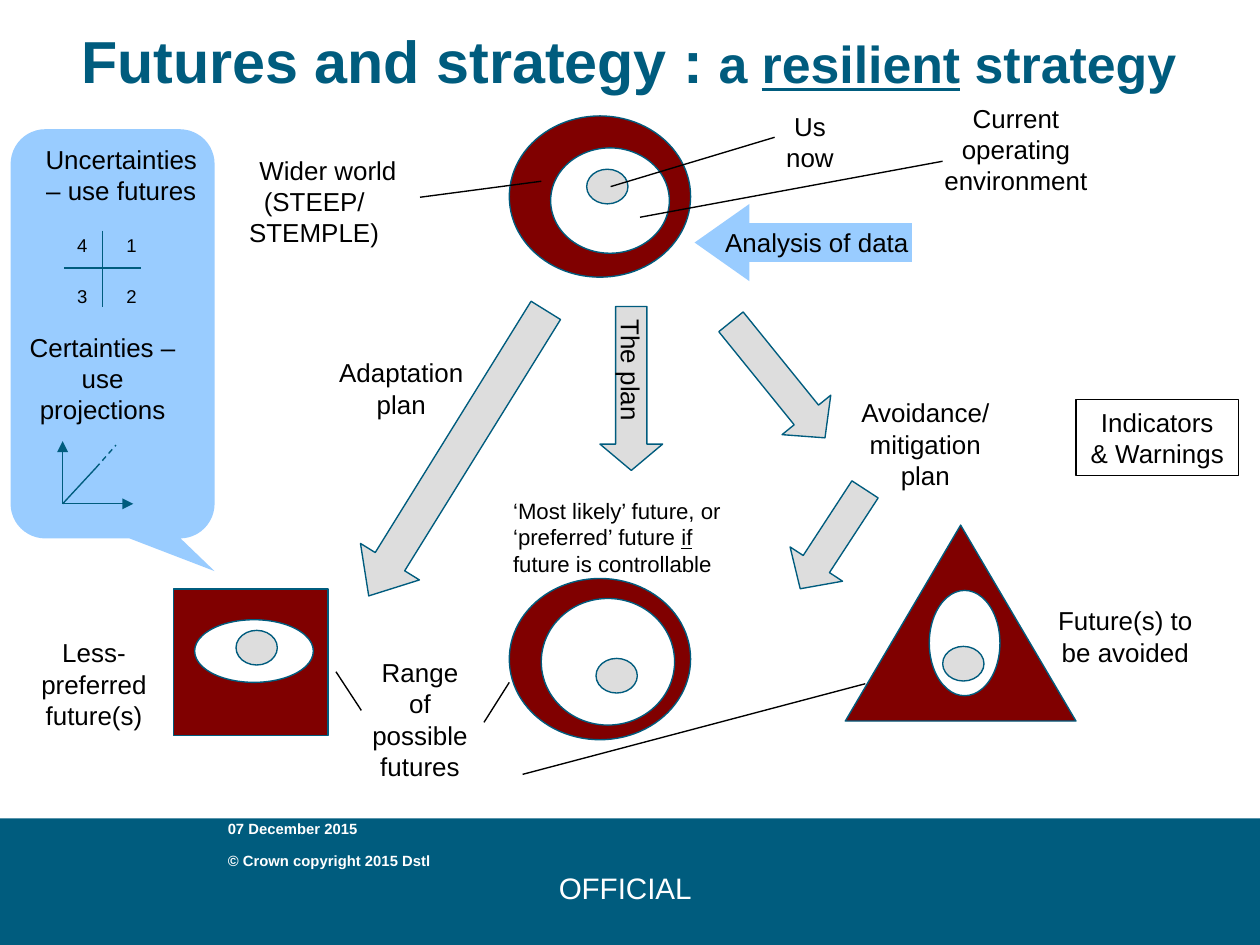
from pptx import Presentation
from pptx.dml.color import RGBColor
from pptx.enum.dml import MSO_LINE as Dash
from pptx.enum.shapes import MSO_CONNECTOR as Link, MSO_SHAPE as Form
from pptx.enum.text import MSO_ANCHOR as Anchor, PP_ALIGN as Align
from pptx.oxml.ns import qn
from pptx.util import Emu, Pt
from lxml.etree import SubElement

PX = 9144  # 100 px to the inch
TEAL = RGBColor(0x00, 0x5C, 0x7E)
MAROON = RGBColor(0x80, 0x00, 0x00)
GREY = RGBColor(0xDD, 0xDD, 0xDD)
BLUE = RGBColor(0x99, 0xCC, 0xFF)
BLACK = RGBColor(0x00, 0x00, 0x00)
WHITE = RGBColor(0xFF, 0xFF, 0xFF)


def px(*sizes):
    return [Emu(n * PX) for n in sizes]


def write(frame, text, size=14, color=BLACK, bold=False, align=Align.CENTER,
          anchor=Anchor.TOP, wrap=True, space=None):
    """Fill a frame; text is a string or a list of paragraphs.

    A paragraph is a string or a list of (words, size, underline) runs.
    """
    frame.word_wrap = wrap
    frame.vertical_anchor = anchor
    for i, part in enumerate([text] if isinstance(text, str) else text):
        para = frame.add_paragraph() if i else frame.paragraphs[0]
        para.alignment = align
        para.line_spacing = space
        runs = [(part, size, False)] if isinstance(part, str) else part
        for words, points, under in runs:
            run = para.add_run()
            run.text = words
            font = run.font
            font.name, font.size, font.bold = "Arial", Pt(points), bold
            font.underline = under
            font.color.rgb = color


class Board:
    def __init__(self, slide):
        self.shapes = slide.shapes
        self.width = Pt(0.75)

    def text(self, box, text, **style):
        frame = self.shapes.add_textbox(*px(*box)).text_frame
        write(frame, text, **style)
        return frame

    def shape(self, form, box, fill=None, line=TEAL, turn=0, adjust=()):
        shape = self.shapes.add_shape(form, *px(*box))
        shape.shadow.inherit = False
        shape.rotation = turn
        for i, value in enumerate(adjust):
            shape.adjustments[i] = value
        if fill is None:
            shape.fill.background()
        else:
            shape.fill.solid()
            shape.fill.fore_color.rgb = fill
        if line is None:
            shape.line.fill.background()
        else:
            shape.line.color.rgb = line
            shape.line.width = self.width
        return shape

    def line(self, ends, color=BLACK, dash=None, arrow=False):
        link = self.shapes.add_connector(Link.STRAIGHT, *px(*ends))
        link.line.color.rgb = color
        link.line.width = self.width
        if dash:
            link.line.dash_style = dash
        if arrow:
            SubElement(link.line._get_or_add_ln(), qn("a:tailEnd"), type="triangle")
        SubElement(link._element.spPr, qn("a:effectLst"))


def draw_footer(board):
    board.shape(Form.RECTANGLE, (0, 614, 945, 95), TEAL, None)
    board.text((339, 616, 260, 94), "OFFICIAL", size=16, color=WHITE,
               anchor=Anchor.MIDDLE, space=Pt(24))
    small = dict(size=8, color=WHITE, bold=True, align=Align.LEFT)
    board.text((161, 634, 181, 31), "© Crown copyright 2015 Dstl", **small)
    board.text((161, 602, 181, 31), "07 December 2015", anchor=Anchor.BOTTOM, **small)


def draw_worlds(board):
    """Each world is an outer form, a white field and a grey core."""
    worlds = [
        (Form.OVAL, (382, 87, 136, 121), (413, 111, 89, 79), (440, 127)),
        (Form.OVAL, (382, 434, 136, 121), (406, 449, 100, 95), (447, 494)),
        (Form.ISOSCELES_TRIANGLE, (634, 394, 173, 147), (697, 443, 53, 79), (707, 485)),
        (Form.RECTANGLE, (130, 442, 116, 110), (146, 465, 89, 47), (177, 473)),
    ]
    for form, outer, field, core in worlds:
        board.shape(form, outer, MAROON)
        board.shape(Form.OVAL, field, WHITE)
        board.shape(Form.OVAL, (*core, 31, 26), GREY)


def draw_arrows(board):
    data = board.shape(Form.LEFT_ARROW, (521, 153, 163, 58), BLUE, None,
                       adjust=(0.5, 0.71))
    write(data.text_frame, "Analysis of data", anchor=Anchor.MIDDLE, wrap=False)
    plan = board.shape(Form.DOWN_ARROW, (450, 230, 47, 123), GREY, adjust=(0.5, 0.42))
    write(plan.text_frame, "The plan", anchor=Anchor.MIDDLE, wrap=False)
    plan.text_frame._txBody.bodyPr.set("vert", "eaVert")
    for box, turn, head in [((560, 229, 47, 112), 321, 0.47),
                            ((601, 360, 47, 89), 33.1, 0.47),
                            ((317, 214, 52, 252), 31.8, 0.58)]:
        board.shape(Form.DOWN_ARROW, box, GREY, turn=turn, adjust=(0.5, head))


def draw_callout(board):
    board.shape(Form.ROUNDED_RECTANGULAR_CALLOUT, (8, 97, 153, 307), BLUE, None,
                adjust=(0.5, 0.58, 0.17))
    board.text((20, 103, 142, 57), "Uncertainties – use futures")
    board.text((10, 244, 134, 81), "Certainties – use projections")
    for ends in [(77, 173, 77, 230), (48, 201, 106, 201)]:
        board.line(ends, TEAL)
    for digit, x, y in [("1", 85, 171), ("2", 85, 209), ("3", 48, 209), ("4", 48, 171)]:
        board.text((x, y, 28, 27), digit, size=10, align=Align.LEFT, wrap=False)
    for end in [(47, 331), (100, 378)]:
        board.line((47, 378, *end), TEAL, arrow=True)
    board.line((47, 378, 72, 351), TEAL)
    board.line((72, 351, 87, 334), TEAL, dash=Dash.DASH)


def draw_labels(board):
    wide = board.text((177, 111, 138, 81), ["Wider world", "(STEEP/", "STEMPLE)"])
    for para in wide.paragraphs[1:]:
        para.alignment = Align.LEFT
    wide.paragraphs[1]._p.get_or_add_pPr().set("marL", str(11 * PX))
    labels = [
        ((697, 72, 130, 81), "Current operating environment"),
        ((579, 78, 57, 57), "Us now"),
        ((267, 488, 96, 104), "Range of possible futures"),
        ((783, 449, 122, 57), "Future(s) to be avoided"),
        ((633, 293, 122, 81), "Avoidance/ mitigation plan"),
        ((244, 263, 114, 57), "Adaptation plan"),
        ((15, 473, 111, 81), "Less- preferred future(s)"),
    ]
    for box, words in labels:
        board.text(box, words)
    board.text((375, 368, 193, 71), [
        "‘Most likely’ future, or",
        [("‘preferred’ future ", 12, False), ("if", 12, True)],
        "future is controllable"], size=12, align=Align.LEFT)
    signs = board.shape(Form.RECTANGLE, (807, 300, 122, 57), line=BLACK)
    write(signs.text_frame, "Indicators & Warnings")
    for ends in [(315, 148, 406, 136), (480, 163, 707, 121), (458, 140, 581, 103),
                 (363, 542, 382, 512), (392, 581, 649, 513), (252, 504, 271, 533)]:
        board.line(ends)


def main():
    deck = Presentation()
    deck.slide_width, deck.slide_height = px(945, 709)
    board = Board(deck.slides.add_slide(deck.slide_layouts[6]))
    draw_footer(board)
    board.text((51, 3, 850, 74), [[("Futures and strategy :", 32, False),
                                   (" a ", 28, False), ("resilient", 28, True),
                                   (" strategy", 28, False)]],
               color=TEAL, bold=True, align=Align.LEFT, space=1.2)
    draw_worlds(board)
    draw_arrows(board)
    draw_callout(board)
    draw_labels(board)
    deck.save("out.pptx")


if __name__ == "__main__":
    main()
